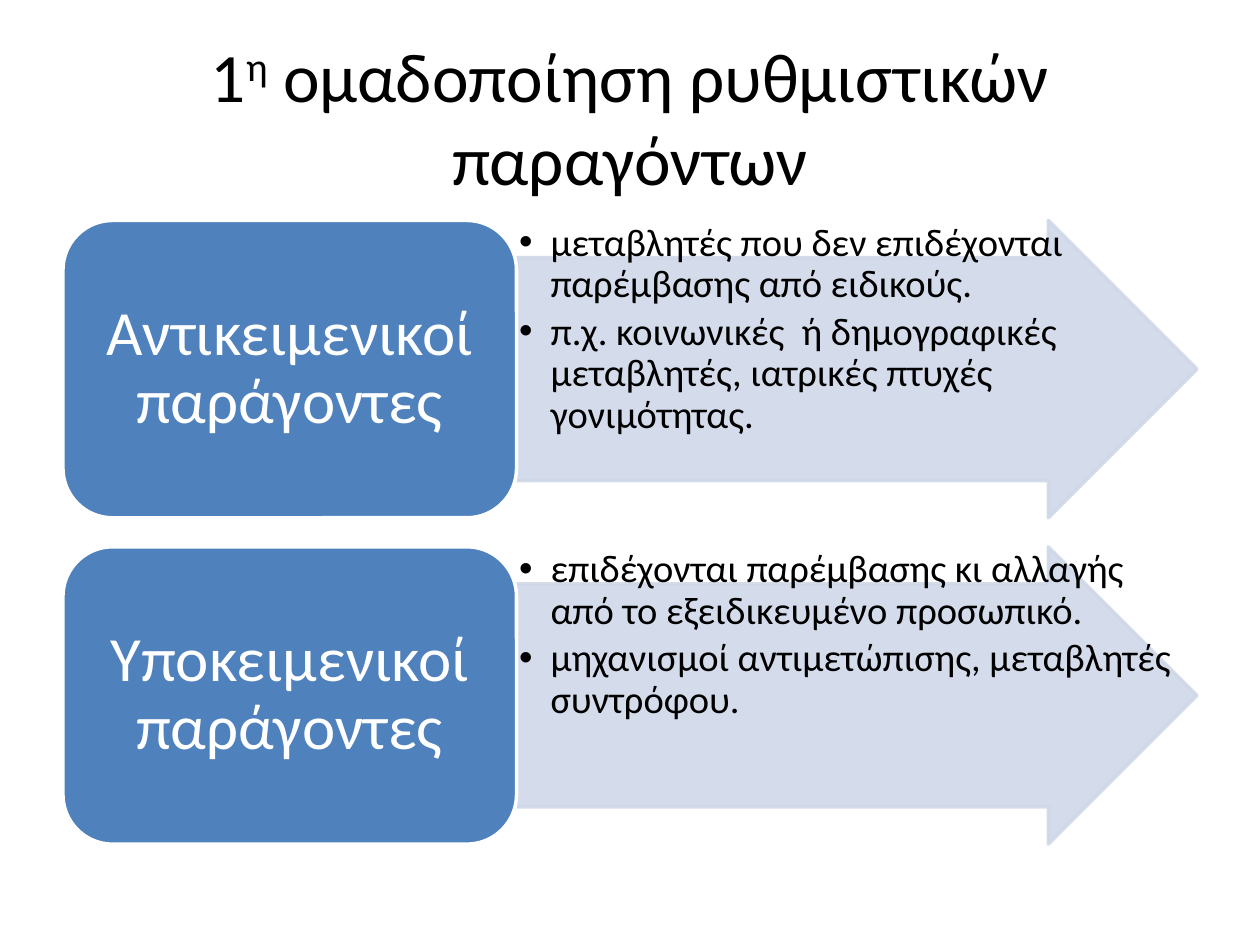
import pptx
import pptx.util
import pptx.dml.color
import pptx.enum.shapes
import pptx.enum.text
import pptx.oxml.ns
import lxml.etree

Inches = pptx.util.Inches
Pt = pptx.util.Pt
SHAPE = pptx.enum.shapes.MSO_SHAPE
ANCHOR = pptx.enum.text.MSO_ANCHOR
ALIGN = pptx.enum.text.PP_ALIGN

COLORS = {"text": "000000", "label": "4F81BD", "arrow": "D0D8E8", "white": "FFFFFF"}
FACTORS = [
    (
        "Αντικειμενικοί παράγοντες",
        [
            "μεταβλητές που δεν επιδέχονται παρέμβασης από ειδικούς.",
            "π.χ. κοινωνικές  ή δημογραφικές  μεταβλητές, ιατρικές πτυχές γονιμότητας.",
        ],
    ),
    (
        "Υποκειμενικοί παράγοντες",
        [
            "επιδέχονται παρέμβασης κι αλλαγής από το εξειδικευμένο προσωπικό.",
            "μηχανισμοί αντιμετώπισης, μεταβλητές συντρόφου.",
        ],
    ),
]


def rgb(name):
    """Return the named colour."""
    return pptx.dml.color.RGBColor.from_string(COLORS[name])


def add_child(parent, tag, **attributes):
    """Append a drawing element with the given attributes."""
    child = lxml.etree.SubElement(parent, pptx.oxml.ns.qn(tag))
    for key, value in attributes.items():
        child.set(key, value)


def add_text(shapes, box, paragraphs, size, color="text", align=ALIGN.LEFT,
             anchor=ANCHOR.TOP, insets=(0.1, 0.05), line_spacing=1.0,
             space_after=0, bullet=False):
    """Place paragraphs, each a list of (text, baseline) runs, in a box."""
    frame = shapes.add_textbox(*map(Inches, box)).text_frame
    frame.word_wrap = True
    frame.vertical_anchor = anchor
    frame.margin_left = frame.margin_right = Inches(insets[0])
    frame.margin_top = frame.margin_bottom = Inches(insets[1])
    for index, runs in enumerate(paragraphs):
        paragraph = frame.paragraphs[0] if index == 0 else frame.add_paragraph()
        paragraph.alignment = align
        paragraph.line_spacing = line_spacing
        paragraph.space_after = Pt(space_after)
        if bullet:
            paragraph.level = 1
            properties = paragraph._p.get_or_add_pPr()
            properties.set("marL", str(Inches(0.25)))
            properties.set("indent", str(Inches(-0.25)))
            add_child(properties, "a:buFont", typeface="Arial")
            add_child(properties, "a:buChar", char="•")
        for text, baseline in runs:
            run = paragraph.add_run()
            run.text = text
            run.font.name = "Calibri"
            run.font.size = Pt(size)
            run.font.color.rgb = rgb(color)
            if baseline:
                run._r.get_or_add_rPr().set("baseline", str(baseline * 1000))


def add_block(shapes, kind, box, fill, line, opacity=100):
    """Place a filled and outlined preset shape."""
    shape = shapes.add_shape(kind, *map(Inches, box))
    shape.shadow.inherit = False
    shape.fill.solid()
    shape.fill.fore_color.rgb = rgb(fill)
    shape.line.color.rgb = rgb(line)
    shape.line.width = Pt(2)
    if opacity < 100:
        for color in shape._element.spPr.iter(pptx.oxml.ns.qn("a:srgbClr")):
            add_child(color, "a:alpha", val=str(opacity * 1000))
    return shape


def add_title(slide, box):
    """Place the slide title."""
    runs = [("1", 0), ("η", 30), (" ομαδοποίηση ρυθμιστικών παραγόντων", 0)]
    add_text(slide.shapes, box, [runs], 39.6, align=ALIGN.CENTER, anchor=ANCHOR.MIDDLE)


def add_factor(shapes, box, label, points):
    """Place a label block and the arrow with its bullet points."""
    left, top, width, height = box
    label_width = width * 0.4
    label_box = (left, top, label_width, height)
    arrow_box = (left + label_width, top, width - label_width, height)
    arrow = add_block(shapes, SHAPE.RIGHT_ARROW, arrow_box, "arrow", "arrow", opacity=90)
    arrow.adjustments[0] = 0.75
    arrow.adjustments[1] = 0.5
    add_text(shapes, arrow_box, [[(point, 0)] for point in points], 22,
             insets=(0.02, 0.02), line_spacing=0.9, space_after=3.3, bullet=True)
    add_block(shapes, SHAPE.ROUNDED_RECTANGLE, label_box, "label", "white")
    add_text(shapes, label_box, [[(label, 0)]], 36, color="white", align=ALIGN.CENTER,
             anchor=ANCHOR.MIDDLE, insets=(0.15, 0.07), line_spacing=0.9)


def add_factors(slide, box, gap):
    """Stack the factors evenly in one group."""
    left, top, width, height = box
    group = slide.shapes.add_group_shape()
    row_height = (height - gap * (len(FACTORS) - 1)) / len(FACTORS)
    for index, (label, points) in enumerate(FACTORS):
        row_box = (left, top + index * (row_height + gap), width, row_height)
        add_factor(group.shapes, row_box, label, points)


def main():
    """Build and save the slide."""
    presentation = pptx.Presentation()
    presentation.slide_width = Inches(10)
    presentation.slide_height = Inches(7.5)
    slide = presentation.slides.add_slide(presentation.slide_layouts[6])
    add_title(slide, (0.5, 0.3, 9, 1.25))
    add_factors(slide, (0.5, 1.75, 9, 4.95), gap=0.23)
    presentation.save("out.pptx")


if __name__ == "__main__":
    main()
